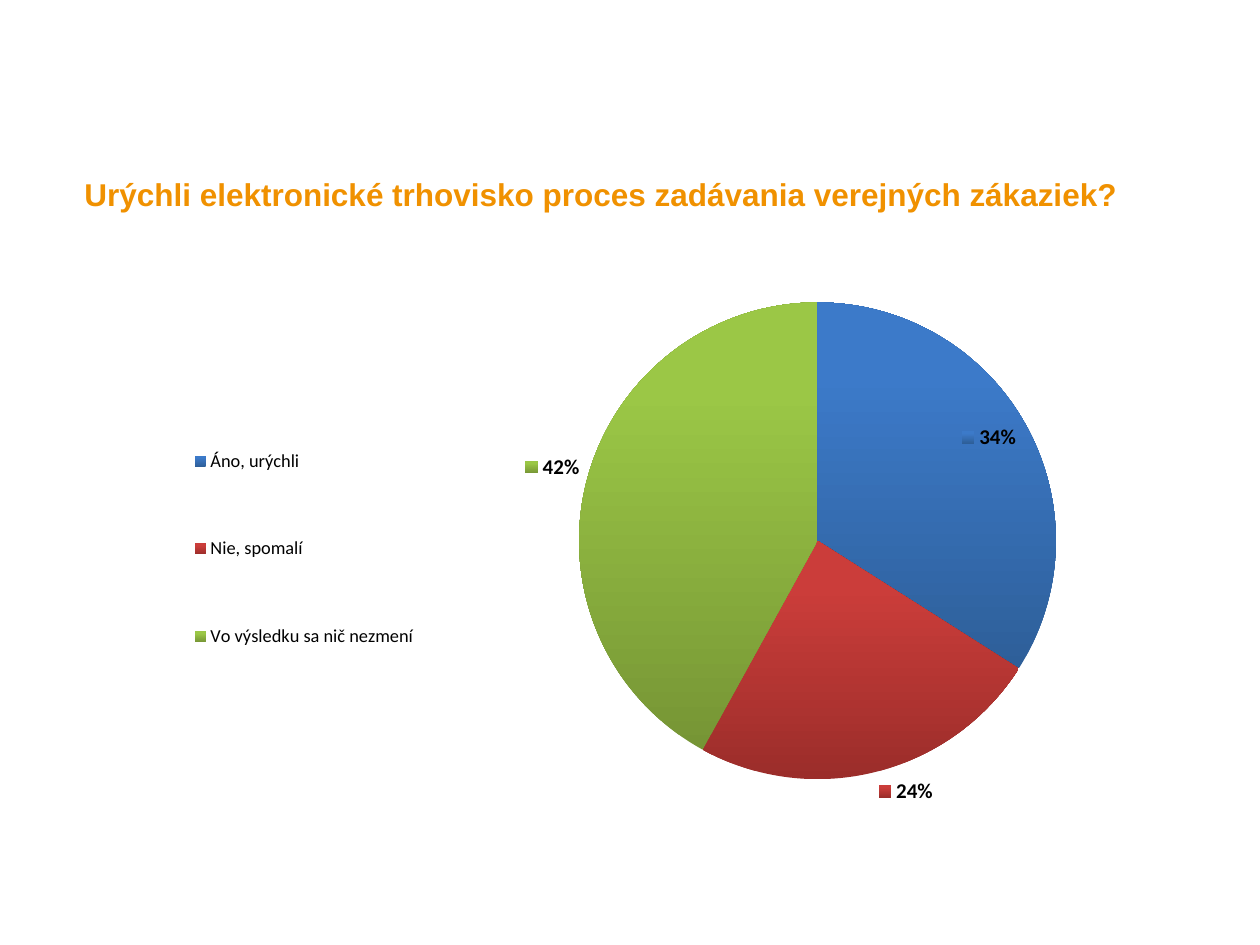
from lxml import etree
from pptx import Presentation
from pptx import util as u
from pptx.chart.data import CategoryChartData
from pptx.dml.color import RGBColor
from pptx.enum import chart as charts, text
from pptx.oxml.ns import qn

COLORS = {
    "title": "F09100",
    "text": "000000",
    "slices": [("2E5F99", "3C7AC9"), ("9B2D2A", "CB3D3A"), ("769535", "9BC746")],
}
ANSWERS = {"Áno, urýchli": 34, "Nie, spomalí": 24, "Vo výsledku sa nič nezmení": 42}


class SlideBuilder:
    def __init__(self, deck):
        self.page = deck.slides.add_slide(deck.slide_layouts[5])

    def style(self, font, name, size, color, bold=False):
        font.name, font.size, font.bold = name, u.Pt(size), bold
        font.color.rgb = RGBColor.from_string(color)

    def title(self, words, left, top, width, height):
        box = self.page.shapes.title
        box.left, box.top = u.Inches(left), u.Inches(top)
        box.width, box.height = u.Inches(width), u.Inches(height)
        frame = box.text_frame
        frame.margin_left = frame.margin_right = 0
        frame.margin_top = frame.margin_bottom = 0
        frame.vertical_anchor = text.MSO_ANCHOR.TOP
        frame.word_wrap = True
        para = frame.paragraphs[0]
        para.alignment = text.PP_ALIGN.LEFT
        span = para.add_run()
        span.text = words
        self.style(span.font, "Arial", 18, COLORS["title"], True)

    def layout(self, parent, index, **values):
        for old in parent.findall(qn("c:layout")):
            parent.remove(old)
        holder = etree.Element(qn("c:layout"))
        parent.insert(index, holder)
        manual = etree.SubElement(holder, qn("c:manualLayout"))
        for tag, value in values.items():
            etree.SubElement(manual, qn("c:" + tag)).set("val", str(value))

    def show_percent(self, labels):
        flags = {"showLegendKey": "1", "showVal": "0", "showPercent": "1",
                 "showLeaderLines": "0"}
        for tag, value in flags.items():
            for flag in labels.findall(qn("c:" + tag)):
                flag.set("val", value)

    def pie(self, answers, left, top, width, height):
        data = CategoryChartData()
        data.categories = list(answers)
        data.add_series("Series 1", list(answers.values()))
        chart = self.page.shapes.add_chart(
            charts.XL_CHART_TYPE.PIE, u.Inches(left), u.Inches(top),
            u.Inches(width), u.Inches(height), data).chart
        chart.has_title = False
        self.style(chart.font, "Calibri", 10, COLORS["text"])
        self.layout(chart.plots[0]._element.getparent(), 0, layoutTarget="inner",
                    xMode="edge", yMode="edge", x=0.4, y=0, w=0.59, h=0.87)
        self.legend(chart)
        plot = chart.plots[0]
        plot.vary_by_categories = True
        self.slices(plot.series[0])

    def legend(self, chart):
        chart.has_legend = True
        legend = chart.legend
        legend.position = charts.XL_LEGEND_POSITION.LEFT
        legend.include_in_layout = False
        self.style(legend.font, "Calibri", 10.5, COLORS["text"])
        self.layout(legend._element, 1, xMode="edge", yMode="edge",
                    x=0.06, y=0.15, w=0.26, h=0.6)

    def slices(self, series):
        for index, (dark, light) in enumerate(COLORS["slices"]):
            style = series.points[index].format
            style.line.fill.background()
            style.fill.gradient()
            style.fill.gradient_angle = 90
            for stop, color, place in zip(style.fill.gradient_stops, (dark, light), (0, 0.8)):
                stop.color.rgb = RGBColor.from_string(color)
                stop.position = place
        labels = series.data_labels
        labels.show_percentage = True
        first = series.points[0].data_label
        for label in (labels, first):
            self.style(label.font, "Calibri", 12, COLORS["text"], True)
            label.position = charts.XL_LABEL_POSITION.OUTSIDE_END
        group = labels._element
        moved = group.find(qn("c:dLbl"))
        self.show_percent(group)
        self.show_percent(moved)
        self.layout(moved, 1, x=-0.07, y=0.05)


def main():
    deck = Presentation()
    deck.slide_width, deck.slide_height = u.Inches(10), u.Inches(7.5)
    slide = SlideBuilder(deck)
    slide.title("Urýchli elektronické trhovisko proces zadávania verejných zákaziek?",
                0.67, 1.39, 8.86, 0.3)
    slide.pie(ANSWERS, 0.88, 2.4, 8.07, 4.35)
    deck.save("out.pptx")


if __name__ == "__main__":
    main()
